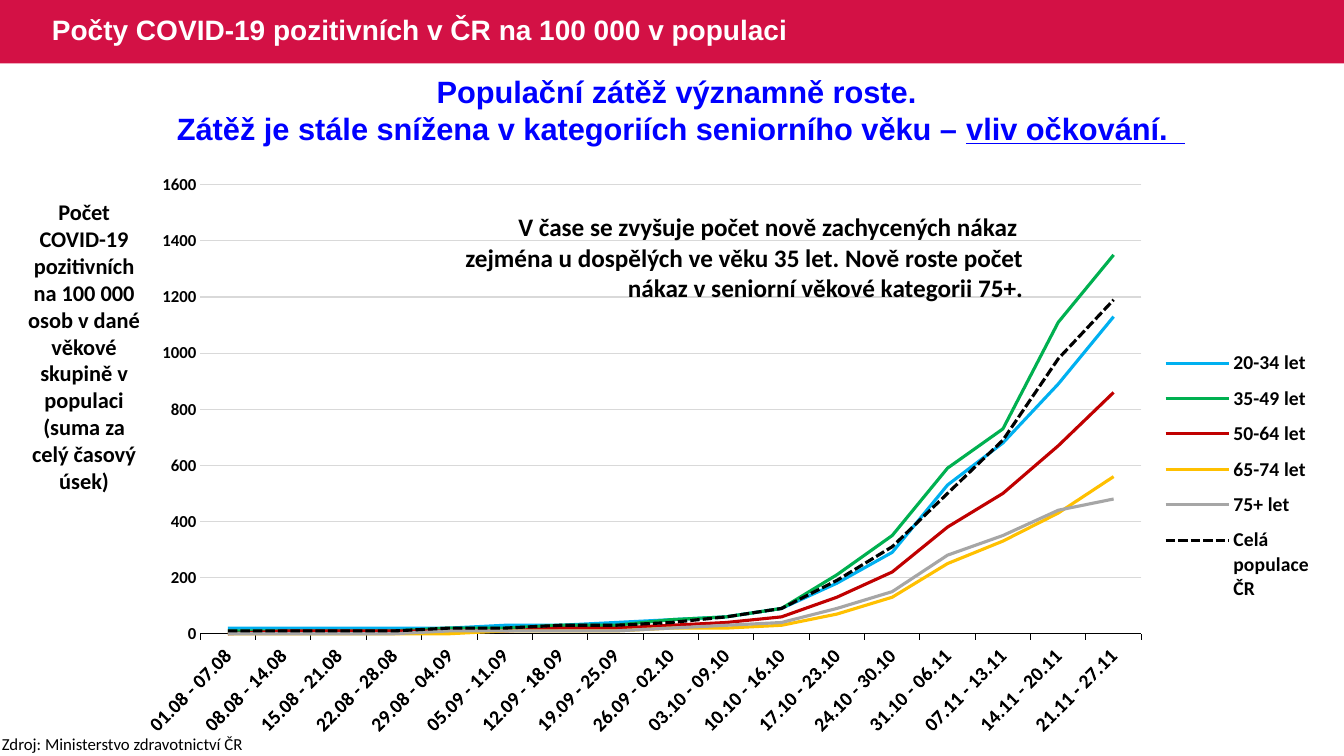
from lxml.etree import SubElement
from pptx import Presentation
from pptx.chart.data import CategoryChartData
from pptx.dml.color import RGBColor
from pptx.enum.chart import XL_CHART_TYPE, XL_LEGEND_POSITION, XL_TICK_MARK
from pptx.enum.dml import MSO_LINE
from pptx.enum.shapes import MSO_SHAPE
from pptx.enum.text import MSO_ANCHOR, PP_ALIGN
from pptx.oxml.ns import qn
from pptx.util import Pt

COLORS = {
    "banner": "D31145", "white": "FFFFFF", "black": "000000", "headline": "0000FF",
    "grid": "D9D9D9", "sky": "00B0F0", "green": "00B050", "red": "C00000",
    "amber": "FFC000", "gray": "A6A6A6",
}

WEEKS = [
    "01.08 - 07.08", "08.08 - 14.08", "15.08 - 21.08", "22.08 - 28.08", "29.08 - 04.09",
    "05.09 - 11.09", "12.09 - 18.09", "19.09 - 25.09", "26.09 - 02.10", "03.10 - 09.10",
    "10.10 - 16.10", "17.10 - 23.10", "24.10 - 30.10", "31.10 - 06.11", "07.11 - 13.11",
    "14.11 - 20.11", "21.11 - 27.11",
]

AGE_GROUPS = [
    ("20-34 let", "sky",
     [20, 20, 20, 20, 20, 30, 30, 40, 50, 60, 90, 180, 290, 530, 680, 890, 1130]),
    ("35-49 let", "green",
     [10, 10, 10, 10, 20, 20, 30, 30, 50, 60, 90, 210, 350, 590, 730, 1110, 1350]),
    ("50-64 let", "red",
     [0, 10, 10, 10, 10, 10, 20, 20, 30, 40, 60, 130, 220, 380, 500, 670, 860]),
    ("65-74 let", "amber",
     [0, 0, 0, 0, 0, 10, 10, 10, 20, 20, 30, 70, 130, 250, 330, 430, 560]),
    ("75+ let", "gray",
     [0, 0, 0, 0, 10, 10, 10, 10, 20, 30, 40, 90, 150, 280, 350, 440, 480]),
    ("Celá populace ČR", "black",
     [10, 10, 10, 10, 20, 20, 30, 30, 40, 60, 90, 190, 310, 500, 690, 980, 1190]),
]


def color(name):
    return RGBColor.from_string(COLORS[name])


def set_font(font, size, name="Calibri", fill="black", bold=True):
    font.name, font.size, font.bold = name, Pt(size), bold
    font.color.rgb = color(fill)


def add_text(slide, box, paragraphs, size, align=PP_ALIGN.LEFT, anchor=MSO_ANCHOR.TOP,
             wrap=True, **font):
    """Add a text box with one style for all its paragraphs."""
    sp = slide.shapes.add_textbox(*map(Pt, box))
    tf = sp.text_frame
    tf.word_wrap = wrap
    tf.vertical_anchor = anchor
    tf.text = "\n".join(paragraphs)
    for p in tf.paragraphs:
        p.alignment = align
        for r in p.runs:
            set_font(r.font, size, **font)
    return tf


def add_banner(slide, box, title):
    left, top, width, height = box
    sp = slide.shapes.add_shape(MSO_SHAPE.RECTANGLE, *map(Pt, box))
    sp.shadow.inherit = False
    sp.fill.solid()
    sp.fill.fore_color.rgb = color("banner")
    sp.line.fill.background()
    tf = add_text(slide, (left + 30, top, width - 357, height), [title], 20,
                  anchor=MSO_ANCHOR.MIDDLE, name="Arial", fill="white")
    tf.paragraphs[0].line_spacing = 0.9


def add_headline(slide, box):
    tf = add_text(slide, box, [
        "Populační zátěž významně roste. ",
        "Zátěž je stále snížena v kategoriích seniorního věku – ",
    ], 22, PP_ALIGN.CENTER, name="Arial", fill="headline")
    r = tf.paragraphs[1].add_run()
    r.text = "vliv očkování.  "
    set_font(r.font, 22, "Arial", "headline")
    r.font.underline = True


def set_layout(element, x, y, w, h, inner=False):
    """Place a plot area or legend by fractions of the chart's box."""
    for old in element.findall(qn("c:layout")):
        element.remove(old)
    layout = SubElement(element, qn("c:layout"))
    manual = SubElement(layout, qn("c:manualLayout"))
    settings = [("layoutTarget", "inner")] if inner else []
    settings += [("xMode", "edge"), ("yMode", "edge"), ("x", x), ("y", y), ("w", w), ("h", h)]
    for tag, value in settings:
        SubElement(manual, qn(f"c:{tag}")).set("val", str(value))
    if inner:
        element.insert(0, layout)
    else:
        element.find(qn("c:legendPos")).addnext(layout)


def style_axes(chart):
    weeks, rate = chart.category_axis, chart.value_axis
    set_font(weeks.tick_labels.font, 14)
    weeks.major_tick_mark = XL_TICK_MARK.OUTSIDE
    weeks.format.line.color.rgb = color("black")
    weeks.format.line.width = Pt(0.75)
    weeks.tick_labels.font._element.getparent().getparent().getparent().find(
        qn("a:bodyPr")).set("rot", "-2700000")

    set_font(rate.tick_labels.font, 12)
    rate.minimum_scale, rate.maximum_scale, rate.major_unit = 0, 1600, 200
    rate.major_tick_mark = XL_TICK_MARK.NONE
    rate.format.line.fill.background()
    rate.major_gridlines.format.line.color.rgb = color("grid")
    rate.major_gridlines.format.line.width = Pt(0.75)


def add_rate_chart(slide, box):
    data = CategoryChartData()
    data.categories = WEEKS
    for name, _, values in AGE_GROUPS:
        data.add_series(name, values)
    chart = slide.shapes.add_chart(XL_CHART_TYPE.LINE, *map(Pt, box), data).chart
    chart.has_title = False
    set_font(chart.font, 14)
    style_axes(chart)

    plot = chart.plots[0]
    plot.vary_by_categories = False
    for series, (_, fill, _) in zip(plot.series, AGE_GROUPS):
        series.smooth = False
        line = series.format.line
        line.color.rgb = color(fill)
        line.width = Pt(2.25)
    line.dash_style = MSO_LINE.SQUARE_DOT

    chart.has_legend = True
    legend = chart.legend
    legend.position = XL_LEGEND_POSITION.RIGHT
    legend.include_in_layout = False
    set_font(legend.font, 14)
    set_layout(legend._element, 0.865, 0.29, 0.13, 0.46)
    set_layout(plot._element.getparent(), 0.045, 0.028, 0.803, 0.759, inner=True)


def main():
    prs = Presentation()
    prs.slide_width, prs.slide_height = Pt(960), Pt(540)
    slide = prs.slides.add_slide(prs.slide_layouts[6])

    add_banner(slide, (0, 0, 960, 45.36),
               "Počty COVID-19 pozitivních v ČR na 100 000 v populaci")
    add_rate_chart(slide, (103, 120.2, 839.5, 422.6))
    add_text(slide, (10.8, 138.2, 98.6, 220.3), [
        "Počet COVID-19 pozitivních na 100 000 osob v dané věkové skupině "
        "v populaci (suma za celý časový úsek)",
    ], 16, PP_ALIGN.CENTER)
    add_headline(slide, (39.6, 48.2, 893.5, 60.5))
    add_text(slide, (308.9, 147.6, 429.1, 94.3), [
        "V čase se zvyšuje počet nově zachycených nákaz ",
        "zejména u dospělých ve věku 35 let. Nově roste počet nákaz "
        "v seniorní věkové kategorii 75+.",
    ], 18, PP_ALIGN.RIGHT)
    add_text(slide, (-5.8, 520.6, 187.9, 21.6), ["Zdroj: Ministerstvo zdravotnictví ČR"],
             12, wrap=False, bold=False)
    prs.save("out.pptx")


if __name__ == "__main__":
    main()
